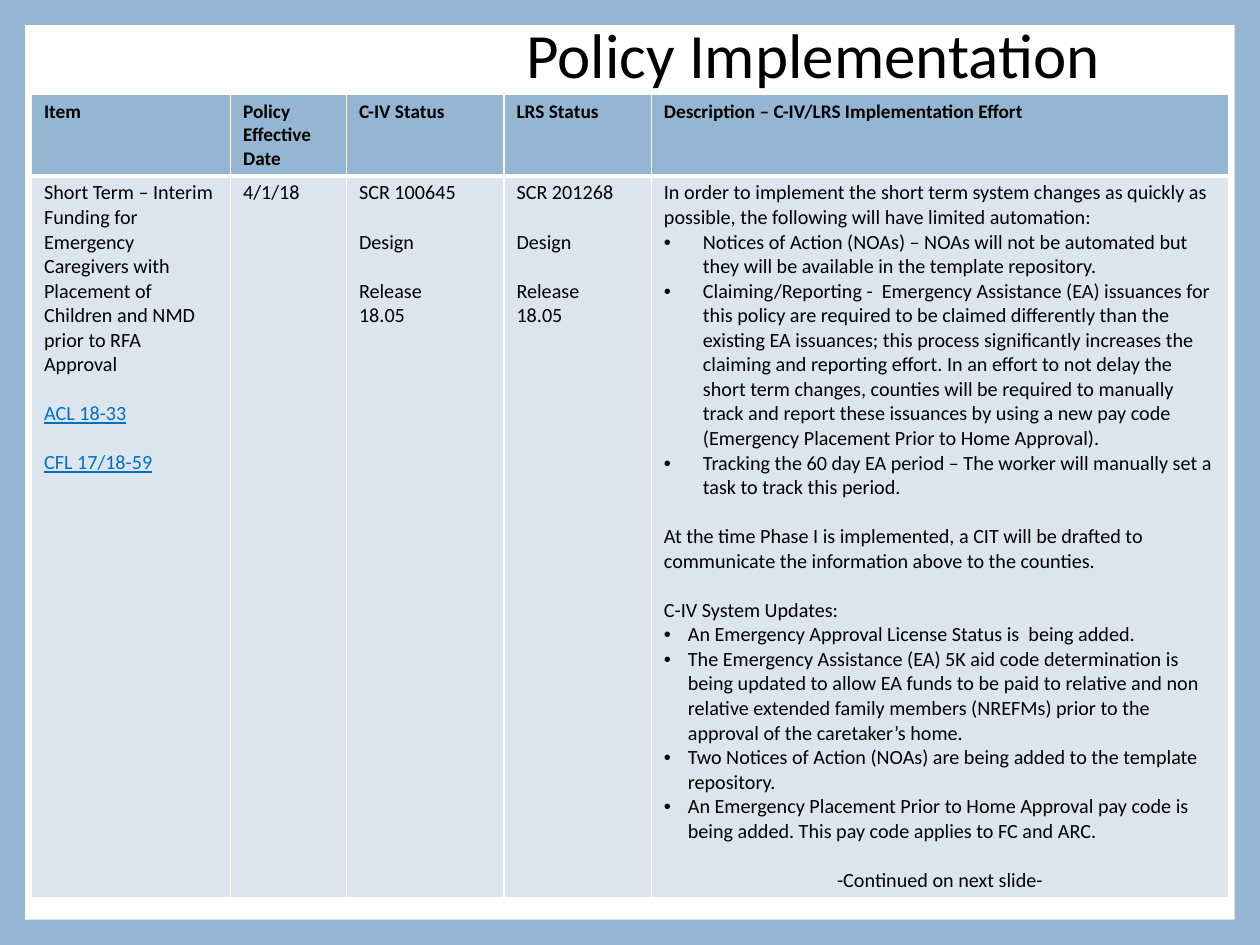
"""Build the policy implementation status slide."""
import pptx
import pptx.dml.color
import pptx.enum.shapes
import pptx.enum.text
import pptx.oxml
import pptx.oxml.ns
import pptx.util

Inches = pptx.util.Inches
Pt = pptx.util.Pt
ALIGN = pptx.enum.text.PP_ALIGN
ANCHOR = pptx.enum.text.MSO_ANCHOR

BLUE, PALE, WHITE, BLACK, LINK = "94B6D2", "DCE5EE", "FFFFFF", "000000", "0070C0"
COLUMN_WIDTHS = [1.58, 0.92, 1.25, 1.17, 4.58]
ROW_HEIGHTS = [0.64, 5.72]
LINE_GAP = 14
WIDE, NARROW = 0.31, 0.19
HEADER_FONT = {"size": Pt(11), "bold": True}
BODY_FONT = {"size": Pt(11.5), "bold": False}
LINK_FONT = {"color": LINK, "underline": True}
GAP = {"gap": True}

HEADERS = ["Item", "Policy Effective Date", "C-IV Status", "LRS Status",
           "Description – C-IV/LRS Implementation Effort"]


def status(request):
    """Return the paragraphs of a status cell."""
    return [(request, {}), ("Design", GAP), ("Release", GAP), ("18.05", {})]


BODY = [
    [("Short Term – Interim Funding for Emergency Caregivers with Placement of "
      "Children and NMD prior to RFA Approval", {}),
     ("ACL 18-33", {"gap": True, "font": LINK_FONT}),
     ("CFL 17/18-59", {"gap": True, "font": LINK_FONT})],
    [("4/1/18", {})],
    status("SCR 100645"),
    status("SCR 201268"),
    [("In order to implement the short term system changes as quickly as possible, "
      "the following will have limited automation:", {}),
     ("Notices of Action (NOAs) – NOAs will not be automated but they will be "
      "available in the template repository.", {"indent": WIDE}),
     ("Claiming/Reporting -  Emergency Assistance (EA) issuances for this policy are "
      "required to be claimed differently than the existing EA issuances; this process "
      "significantly increases the claiming and reporting effort. In an effort to not "
      "delay the short term changes, counties will be required to manually track and "
      "report these issuances by using a new pay code (Emergency Placement Prior to "
      "Home Approval).", {"indent": WIDE}),
     ("Tracking the 60 day EA period – The worker will manually set a task to track "
      "this period.", {"indent": WIDE}),
     ("At the time Phase I is implemented, a CIT will be drafted to communicate the "
      "information above to the counties.", GAP),
     ("C-IV System Updates:", GAP),
     ("An Emergency Approval License Status is  being added.", {"indent": NARROW}),
     ("The Emergency Assistance (EA) 5K aid code determination is being updated to "
      "allow EA funds to be paid to relative and non relative extended family members "
      "(NREFMs) prior to the approval of the caretaker’s home.", {"indent": NARROW}),
     ("Two Notices of Action (NOAs) are being added to the template repository.",
      {"indent": NARROW}),
     ("An Emergency Placement Prior to Home Approval pay code is being added. This pay "
      "code applies to FC and ARC.", {"indent": NARROW}),
     ("-Continued on next slide-", {"gap": True, "alignment": ALIGN.CENTER})],
]


def rgb(value):
    """Turn a hex string into a colour."""
    return pptx.dml.color.RGBColor.from_string(value)


def fill_solid(target, color):
    """Give a shape, cell or background a solid fill."""
    target.fill.solid()
    target.fill.fore_color.rgb = rgb(color)


def apply_format(target, values):
    """Set each named attribute on the target."""
    for name, value in values.items():
        setattr(target, name, value)


def format_font(font, values):
    """Set the font, taking its colour from the same values."""
    values = {"name": "Calibri", "color": BLACK, **values}
    font.color.rgb = rgb(values.pop("color"))
    apply_format(font, values)


def add_bullet(para, indent):
    """Hang the paragraph on a round bullet."""
    props = para._p.get_or_add_pPr()
    props.set("marL", str(Inches(indent)))
    props.set("indent", str(-Inches(indent)))
    space = pptx.oxml.ns.nsdecls("a")
    props.append(pptx.oxml.parse_xml(f'<a:buFont {space} typeface="Arial"/>'))
    props.append(pptx.oxml.parse_xml(f'<a:buChar {space} char="•"/>'))


def write_paragraph(para, text, font, gap=False, indent=0, alignment=ALIGN.LEFT):
    """Write one formatted paragraph."""
    apply_format(para, {"alignment": alignment,
                        "space_before": Pt(LINE_GAP if gap else 0)})
    span = para.add_run()
    span.text = text
    format_font(span.font, font)
    if indent:
        add_bullet(para, indent)


def set_borders(cell, widths):
    """Draw white cell borders with a width in points for each side."""
    props = cell._tc.get_or_add_tcPr()
    for position, side in enumerate("LRTB"):
        props.insert(position, pptx.oxml.parse_xml(
            f'<a:ln{side} {pptx.oxml.ns.nsdecls("a")} w="{Pt(widths.get(side, 1))}">'
            f'<a:solidFill><a:srgbClr val="{WHITE}"/></a:solidFill></a:ln{side}>'))


def fill_cell(cell, paragraphs, font, color, widths):
    """Write, fill and border one table cell."""
    apply_format(cell, {"margin_left": Inches(0.1), "margin_right": Inches(0.1),
                        "margin_top": Inches(0.04), "margin_bottom": Inches(0.04),
                        "vertical_anchor": ANCHOR.TOP})
    fill_solid(cell, color)
    set_borders(cell, widths)
    frame = cell.text_frame
    for index, (text, options) in enumerate(paragraphs):
        para = frame.add_paragraph() if index else frame.paragraphs[0]
        options = {**options, "font": {**font, **options.get("font", {})}}
        write_paragraph(para, text, **options)


def add_title(page, text):
    """Place the title at the top right."""
    title = page.shapes.title
    apply_format(title, {"left": Inches(0.5), "top": Inches(0.17),
                         "width": Inches(8.33), "height": Inches(0.58)})
    apply_format(title.text_frame, {"vertical_anchor": ANCHOR.MIDDLE, "word_wrap": True,
                                    "auto_size": pptx.enum.text.MSO_AUTO_SIZE.NONE})
    para = title.text_frame.paragraphs[0]
    para.line_spacing = 0.9
    write_paragraph(para, text, {"size": Pt(36)}, alignment=ALIGN.RIGHT)


def add_panel(page):
    """Put the white panel behind the title."""
    panel = page.shapes.add_shape(pptx.enum.shapes.MSO_SHAPE.RECTANGLE, Inches(0.2),
                                  Inches(0.2), Inches(9.6), Inches(7.1))
    panel.shadow.inherit = False
    fill_solid(panel, WHITE)
    panel.line.fill.background()
    page.shapes.title.element.addprevious(panel.element)


def add_policy_table(page):
    """Add the table of policies."""
    table = page.shapes.add_table(
        len(ROW_HEIGHTS), len(COLUMN_WIDTHS), Inches(0.25), Inches(0.75),
        Inches(sum(COLUMN_WIDTHS)), Inches(sum(ROW_HEIGHTS))).table
    for column, width in zip(table.columns, COLUMN_WIDTHS):
        column.width = Inches(width)
    for row, height in zip(table.rows, ROW_HEIGHTS):
        row.height = Inches(height)
    for index, (header, body) in enumerate(zip(HEADERS, BODY)):
        fill_cell(table.cell(0, index), [(header, {})], HEADER_FONT, BLUE, {"B": 3})
        fill_cell(table.cell(1, index), body, BODY_FONT, PALE, {"T": 3})


def main():
    """Build and save the deck."""
    deck = pptx.Presentation()
    apply_format(deck, {"slide_width": Inches(10), "slide_height": Inches(7.5)})
    page = deck.slides.add_slide(deck.slide_layouts[5])
    fill_solid(page.background, BLUE)
    add_panel(page)
    add_title(page, "Policy Implementation")
    add_policy_table(page)
    deck.save("out.pptx")


if __name__ == "__main__":
    main()
